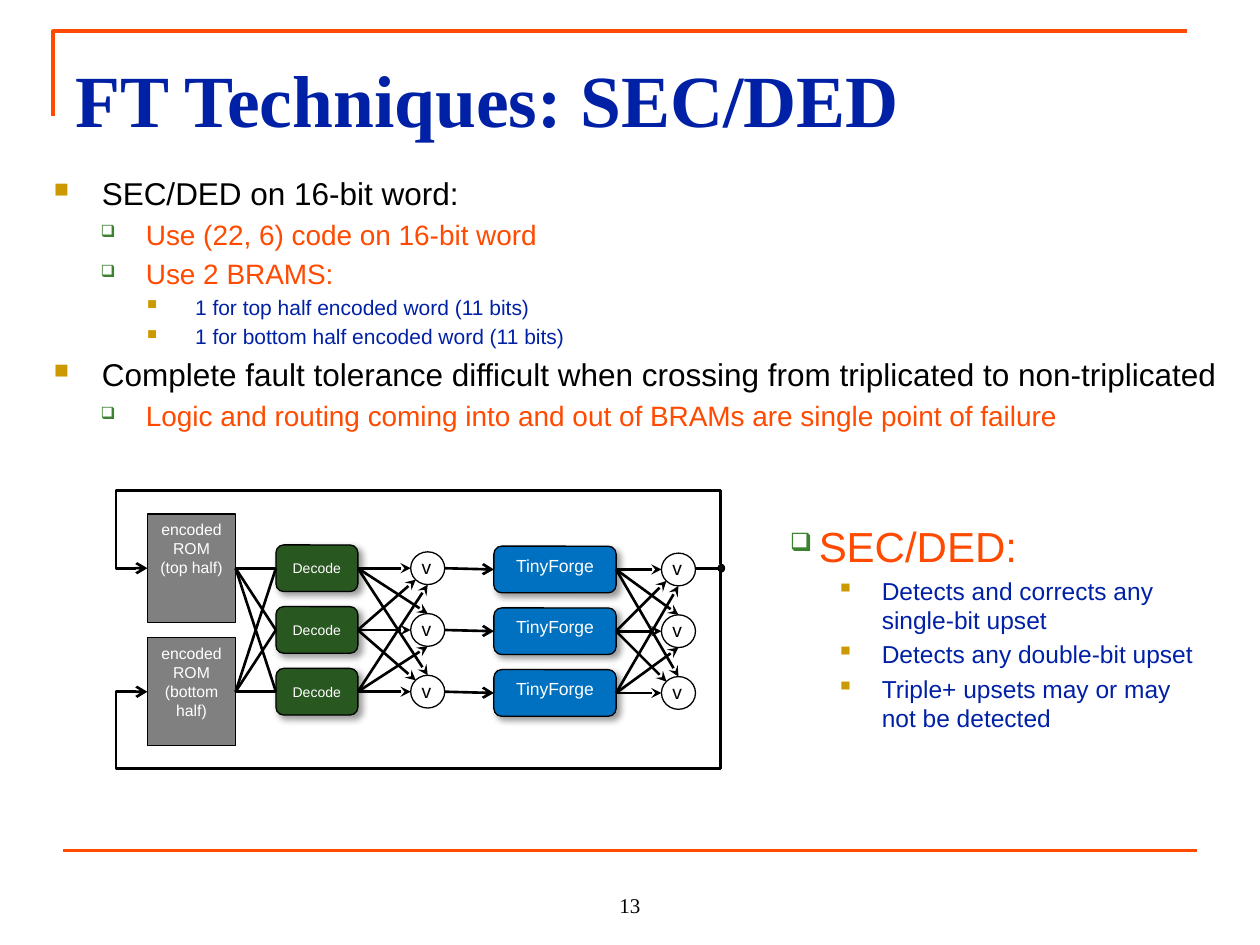
from lxml import etree
from pptx import Presentation
from pptx.dml.color import RGBColor
from pptx.enum.shapes import MSO_CONNECTOR, MSO_SHAPE
from pptx.enum.text import MSO_ANCHOR, PP_ALIGN
from pptx.oxml.ns import qn
from pptx.util import Inches, Pt

BLACK = RGBColor(0x00, 0x00, 0x00)
NEAR_BLACK = RGBColor(0x0D, 0x0D, 0x0D)
WHITE = RGBColor(0xFF, 0xFF, 0xFF)
GRAY = RGBColor(0x80, 0x80, 0x80)
ORANGE = RGBColor(0xFF, 0x4A, 0x00)
NAVY = RGBColor(0x00, 0x21, 0xA5)
BLUE = RGBColor(0x00, 0x70, 0xC0)
DARK_GREEN = RGBColor(0x28, 0x57, 0x20)
GREEN = RGBColor(0x3B, 0x81, 0x2F)
GOLD = RGBColor(0xCC, 0x99, 0x00)

STRAIGHT, ELBOW = MSO_CONNECTOR.STRAIGHT, MSO_CONNECTOR.ELBOW
ROUND_RECT, CIRCLE = MSO_SHAPE.ROUNDED_RECTANGLE, MSO_SHAPE.FLOWCHART_CONNECTOR
TOP, MIDDLE, BOTTOM = MSO_ANCHOR.TOP, MSO_ANCHOR.MIDDLE, MSO_ANCHOR.BOTTOM
LEFT, CENTER = PP_ALIGN.LEFT, PP_ALIGN.CENTER
LEFT_SIDE, RIGHT_SIDE = 1, 3

SERIF = "Times New Roman"
SANS = "Arial"

# Paragraph levels: margin, hanging indent, bullet, bullet colour, bullet size, font
MAIN_LEVELS = [
    (0.38, 0.38, "■", GOLD, 65, {"size": Pt(18), "color": BLACK}),
    (0.73, 0.36, "❑", GREEN, 60, {"size": Pt(16), "color": ORANGE}),
    (1.12, 0.38, "■", GOLD, 65, {"size": Pt(12), "color": NAVY}),
]
SIDE_LEVELS = [
    (0.23, 0.23, "❑", GREEN, 60, {"size": Pt(24), "color": ORANGE}),
    (0.73, 0.36, "▪", GOLD, 100, {"size": Pt(14), "color": NAVY}),
]
MAIN_POINTS = [
    (0, "SEC/DED on 16-bit word:"),
    (1, "Use (22, 6) code on 16-bit word"),
    (1, "Use 2 BRAMS:"),
    (2, "1 for top half encoded word (11 bits)"),
    (2, "1 for bottom half encoded word (11 bits)"),
    (0, "Complete fault tolerance difficult when crossing from triplicated to non-triplicated"),
    (1, "Logic and routing coming into and out of BRAMs are single point of failure"),
]
SIDE_POINTS = [
    (0, "SEC/DED:"),
    (1, "Detects and corrects any single-bit upset"),
    (1, "Detects any double-bit upset"),
    (1, "Triple+ upsets may or may not be detected"),
]

ROWS = [4.51, 5.0, 5.49]
VOTER_W, VOTER_H = 0.27, 0.26


def add_xml(parent, tag, **attrs):
    return etree.SubElement(parent, qn(tag), attrs)


class Sketch:
    def __init__(self, slide, font=SANS):
        self.shapes = slide.shapes
        self.font = font

    def run(self, p, text, **fmt):
        r = p.add_run()
        r.text = text
        color = fmt.pop("color", BLACK)
        for name, value in {"name": self.font, **fmt}.items():
            setattr(r.font, name, value)
        r.font.color.rgb = color

    def fill_text(self, sp, lines, anchor=TOP, align=CENTER, **fmt):
        tf = sp.text_frame
        tf.word_wrap = True
        tf.vertical_anchor = anchor
        for i, line in enumerate(lines):
            p = tf.add_paragraph() if i else tf.paragraphs[0]
            p.alignment = align
            self.run(p, line, **fmt)

    def text(self, box, line, **fmt):
        sp = self.shapes.add_textbox(*map(Inches, box))
        self.fill_text(sp, [line], **fmt)
        return sp

    def bullets(self, box, points, levels):
        tf = self.shapes.add_textbox(*map(Inches, box)).text_frame
        tf.word_wrap = True
        for i, (level, line) in enumerate(points):
            margin, hang, mark, color, size, fmt = levels[level]
            p = tf.add_paragraph() if i else tf.paragraphs[0]
            p.level = level
            p.space_before = Pt(round(fmt["size"].pt * 0.2, 1) if i else 0)
            pPr = p._p.get_or_add_pPr()
            pPr.set("marL", str(Inches(margin)))
            pPr.set("indent", str(-Inches(hang)))
            add_xml(add_xml(pPr, "a:buClr"), "a:srgbClr", val=str(color))
            add_xml(pPr, "a:buSzPct", val=str(size * 1000))
            add_xml(pPr, "a:buChar", char=mark)
            self.run(p, line, **fmt)

    def shape(self, kind, box, fill):
        sp = self.shapes.add_shape(kind, *map(Inches, box))
        sp.shadow.inherit = False
        sp.fill.solid()
        sp.fill.fore_color.rgb = fill
        sp.line.color.rgb = BLACK
        sp.line.width = Pt(0.75)
        return sp

    def block(self, x, y, w, h, fill, lines, shadow=True, **fmt):
        """Box centred vertically on y, rounded and shadowed or else square and flat."""
        sp = self.shape(ROUND_RECT, (x, y - h / 2, w, h), fill)
        self.fill_text(sp, lines, color=WHITE, **fmt)
        if shadow:
            effects = sp._element.spPr.find(qn("a:effectLst"))
            outer = add_xml(effects, "a:outerShdw", blurRad=str(Pt(4)), dist=str(Pt(3)),
                            dir="2700000", algn="tl", rotWithShape="0")
            color = add_xml(outer, "a:srgbClr", val="000000")
            add_xml(color, "a:alpha", val="40000")
        else:
            sp.adjustments[0] = 0
        return sp

    def voter(self, x, y):
        top = y - VOTER_H / 2
        self.shape(CIRCLE, (x, top, VOTER_W, VOTER_H), WHITE)
        self.text((x - 0.04, top - 0.04, 0.33, 0.32), "v", anchor=MIDDLE, size=Pt(11))

    def line(self, start, end, tail=None, color=BLACK, width=1.5, source=None,
             target=None, kind=STRAIGHT):
        c = self.shapes.add_connector(kind, *map(Inches, (*start, *end)))
        if source is not None:
            c.begin_connect(source, RIGHT_SIDE)
        if target is not None:
            c.end_connect(target, LEFT_SIDE)
        c.line.color.rgb = color
        c.line.width = Pt(width)
        if tail:
            add_xml(c.line._get_or_add_ln(), "a:tailEnd", type=tail)
        add_xml(c._element.spPr, "a:effectLst")
        return c

    def feedback(self, start, end, turn_y, turn_x, flips):
        """Four-part elbow that leaves vertically, runs along turn_y and returns at turn_x."""
        (x1, y1), (x2, y2) = start, end
        w, h = y2 - y1, x1 - x2
        left, top = (x1 + x2 - w) / 2, (y1 + y2 - h) / 2
        c = self.line((left, top), (left + w, top + h), "arrow", kind=ELBOW)
        xfrm = c._element.spPr.find(qn("a:xfrm"))
        for name, value in flips.items():
            xfrm.set(name, value)
        geom = c._element.spPr.find(qn("a:prstGeom"))
        geom.set("prst", "bentConnector4")
        guides = geom.find(qn("a:avLst"))
        ratios = ((turn_y - y1) / w, (x1 - turn_x) / h)
        for i, ratio in enumerate(ratios, 1):
            add_xml(guides, "a:gd", name=f"adj{i}", fmla=f"val {round(ratio * 100000)}")

    def vote(self, blocks, right, voter_x, rows):
        """Wire every block of a column to every voter of the next one."""
        for i, block in enumerate(blocks):
            for j, y in enumerate(rows):
                side = 1 if i > j else -1
                if i == j:
                    end = (voter_x, y)
                elif i == 1:
                    end = (voter_x + 0.04, y + side * 0.09)
                else:
                    end = (voter_x + VOTER_W / 2, y + side * VOTER_H / 2)
                self.line((right, rows[i]), end, "stealth", source=block)


def draw_circuit(s):
    decode_x, voter_x, core_x, final_x = 2.19, 3.26, 3.92, 5.25
    core_rows = [y + 0.01 for y in ROWS]
    roms = [s.block(1.17, y, 0.7, 0.86, GRAY, ["encoded ROM", half], shadow=False, size=Pt(9))
            for y, half in ((ROWS[0], "(top half)"), (ROWS[2], "(bottom half)"))]
    decoders = [s.block(decode_x, y, 0.65, 0.37, DARK_GREEN, ["Decode"],
                        anchor=MIDDLE, size=Pt(8)) for y in ROWS]
    cores = [s.block(core_x, y, 0.97, 0.37, BLUE, ["TinyForge"], size=Pt(10))
             for y in core_rows]
    for y, core_y, core in zip(ROWS, core_rows, cores):
        s.voter(voter_x, y)
        s.voter(final_x, core_y)
        s.line((voter_x + VOTER_W, y), (core_x, core_y), "arrow", target=core)
    for rom in roms:
        for decoder in decoders:
            s.line((0, 0), (1, 1), source=rom, target=decoder)
    s.vote(decoders, 2.84, voter_x, ROWS)
    s.vote(cores, 4.89, final_x, core_rows)

    s.shape(CIRCLE, (5.7, 4.48, 0.05, 0.06), NEAR_BLACK)
    s.line((final_x + VOTER_W, 4.51), (5.7, 4.51))
    s.feedback((5.72, 4.54), (1.17, 5.49), 6.1, 0.92, {"rot": "5400000"})
    s.feedback((5.72, 4.48), (1.17, 4.51), 3.89, 0.92,
               {"rot": "16200000", "flipH": "1", "flipV": "1"})


def main():
    prs = Presentation()
    prs.slide_width, prs.slide_height = Inches(10), Inches(7.5)
    s = Sketch(prs.slides.add_slide(prs.slide_layouts[6]))

    builder = s.shapes.build_freeform(Inches(0.42), Inches(0.92))
    builder.add_line_segments([(Inches(0.42), Inches(0.25)), (Inches(9.42), Inches(0.25))],
                              close=False)
    corner = builder.convert_to_shape()
    corner.shadow.inherit = False
    corner.fill.background()
    corner.line.color.rgb = ORANGE
    corner.line.width = Pt(2.25)
    s.line((0.5, 6.75), (9.5, 6.75), color=ORANGE, width=2.25)

    title = s.text((0.5, 0.3, 9, 1.03), "FT Techniques: SEC/DED", align=LEFT,
                   name=SERIF, size=Pt(42), bold=True, color=NAVY)
    title.text_frame.margin_top = Inches(0.13)
    s.text((4, 6.83, 2, 0.5), "13", anchor=BOTTOM, name=SERIF, size=Pt(12))

    draw_circuit(s)
    s.bullets((0.33, 1.33, 9.5, 2.17), MAIN_POINTS, MAIN_LEVELS)
    s.bullets((6.17, 4.08, 3.5, 2.08), SIDE_POINTS, SIDE_LEVELS)
    prs.save("out.pptx")


if __name__ == "__main__":
    main()
